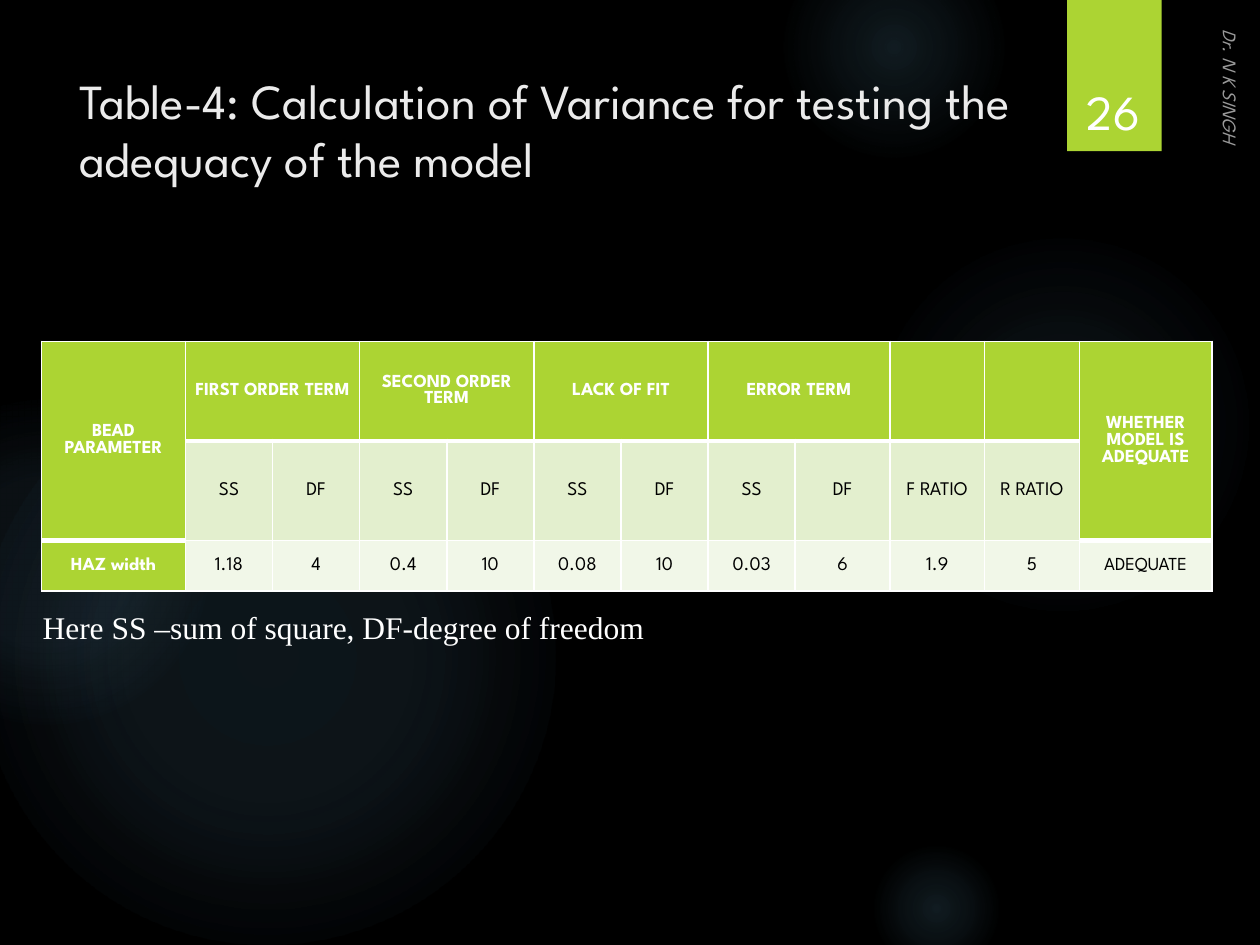
from lxml import etree
from pptx import Presentation
from pptx.dml.color import RGBColor
from pptx.enum.shapes import MSO_SHAPE as Shape
from pptx.enum.text import MSO_ANCHOR as Anchor, PP_ALIGN as Align
from pptx.oxml import parse_xml
from pptx.oxml.ns import nsdecls, qn
from pptx.util import Inches, Pt

BLACK = RGBColor(0x00, 0x00, 0x00)
WHITE = RGBColor(0xFF, 0xFF, 0xFF)
OFF_WHITE = RGBColor(0xEB, 0xEB, 0xEB)
GREEN = RGBColor(0xAC, 0xD4, 0x33)
BAND_DARK = RGBColor(0xE3, 0xEF, 0xCE)
BAND_LIGHT = RGBColor(0xF1, 0xF7, 0xE8)
GLOW = RGBColor(0x7A, 0xC4, 0xF0)
SANS, SERIF = "League Spartan", "Times New Roman"

# left, top, diameter, then (position %, opacity %) of each gradient stop
GLOWS = [
    (6.89, 1.83, 3.08, [(0, 7), (36, 6), (69, 0)]),
    (6.22, -0.5, 1.75, [(0, 14), (36, 7), (73, 0)]),
    (6.89, 6.67, 1.08, [(0, 14), (36, 7), (66, 0)]),
    (-0.17, 2.92, 4.58, [(0, 11), (36, 10), (75, 0)]),
    (-0.92, 3.17, 2.58, [(0, 8), (36, 8), (72, 0)]),
]

TITLE = "Table-4: Calculation of Variance for testing the adequacy of the model"
ROWS = [
    ["BEAD PARAMETER", "FIRST ORDER TERM", "", "SECOND ORDER TERM", "", "LACK OF FIT", "",
     "ERROR TERM", "", "", "", "WHETHER MODEL IS ADEQUATE"],
    ["", "SS", "DF", "SS", "DF", "SS", "DF", "SS", "DF", "F RATIO", "R RATIO", ""],
    ["HAZ width", "1.18", "4", "0.4", "10", "0.08", "10", "0.03", "6", "1.9", "5", "ADEQUATE"],
]
TABLE_LEFT, TABLE_TOP, TABLE_WIDTH = 0.33, 2.71, 9.29
COLUMN_SHARES = [1.14] + [0.69] * 7 + [0.75] * 3 + [1.05]
ROW_HEIGHTS = [0.79, 0.79, 0.4]
LAST = len(COLUMN_SHARES) - 1
MERGES = [((0, 0), (1, 0)), ((0, LAST), (1, LAST))]
MERGES += [((0, col), (0, col + 1)) for col in range(1, 9, 2)]


def write(frame, text, *, size, color=WHITE, font=SANS, bold=False, italic=False,
          align=Align.LEFT, anchor=Anchor.TOP, wrap=True, line=None):
    frame.word_wrap = wrap
    frame.vertical_anchor = anchor
    para = frame.paragraphs[0]
    para.alignment = align
    if line:
        para.line_spacing = Pt(line)
    span = para.add_run()
    span.text = text
    span.font.name, span.font.size = font, Pt(size)
    span.font.bold, span.font.italic = bold, italic
    span.font.color.rgb = color
    return span


def add_text(page, at, text, rotation=0, **style):
    box = page.shapes.add_textbox(*map(Inches, at))
    box.rotation = rotation
    return box, write(box.text_frame, text, **style)


def add_plain_shape(page, kind, at):
    shape = page.shapes.add_shape(kind, *map(Inches, at))
    shape.shadow.inherit = False
    shape.line.fill.background()
    return shape


def add_glow(page, left, top, size, stops):
    """Add a circle that fades out from its centre."""
    shape = add_plain_shape(page, Shape.OVAL, (left, top, size, size))
    marks = "".join(
        f'<a:gs pos="{pos * 1000}"><a:srgbClr val="{GLOW}">'
        f'<a:alpha val="{opacity * 1000}"/></a:srgbClr></a:gs>' for pos, opacity in stops)
    gradient = parse_xml(
        f'<a:gradFill {nsdecls("a")} rotWithShape="1"><a:gsLst>{marks}</a:gsLst>'
        '<a:path path="circle"><a:fillToRect l="50000" t="50000" r="50000" b="50000"/>'
        '</a:path></a:gradFill>')
    shape.element.spPr.find(qn("a:prstGeom")).addnext(gradient)


def set_borders(cell, **widths):
    props = cell._tc.get_or_add_tcPr()
    for side in "LRTB":
        width = Pt(widths.get(side, 1))
        props.append(parse_xml(
            f'<a:ln{side} {nsdecls("a")} w="{width}"><a:solidFill>'
            f'<a:srgbClr val="{WHITE}"/></a:solidFill></a:ln{side}>'))


def add_variance_table(page):
    table = page.shapes.add_table(
        len(ROWS), len(COLUMN_SHARES), Inches(TABLE_LEFT), Inches(TABLE_TOP),
        Inches(TABLE_WIDTH), Inches(sum(ROW_HEIGHTS))).table
    table.first_row = table.horz_banding = False
    for column, share in zip(table.columns, COLUMN_SHARES):
        column.width = Inches(TABLE_WIDTH * share / sum(COLUMN_SHARES))
    for row, height in zip(table.rows, ROW_HEIGHTS):
        row.height = Inches(height)
    for first, last in MERGES:
        table.cell(*first).merge(table.cell(*last))

    for r, texts in enumerate(ROWS):
        for c, text in enumerate(texts):
            cell = table.cell(r, c)
            tall = c in (0, LAST)
            header = r == 0 or c == 0 or (r == 1 and tall)
            heading_end = 1 if tall else 0
            set_borders(cell, B=3 if r == heading_end or r == 0 else 1,
                        T=3 if r == heading_end + 1 else 1)
            cell.fill.solid()
            cell.fill.fore_color.rgb = GREEN if header else (BAND_DARK if r == 1 else BAND_LIGHT)
            cell.margin_left = cell.margin_right = Inches(0.07)
            cell.margin_top = cell.margin_bottom = 0
            cell.vertical_anchor = Anchor.MIDDLE
            if text:
                write(cell.text_frame, text, size=10.5 if header or tall else 11,
                      color=WHITE if header else BLACK, bold=header,
                      align=Align.CENTER, anchor=None, wrap=None)


def main():
    deck = Presentation()
    deck.slide_width, deck.slide_height = Inches(10), Inches(7.5)
    page = deck.slides.add_slide(deck.slide_layouts[6])
    page.background.fill.solid()
    page.background.fill.fore_color.rgb = BLACK

    for glow in GLOWS:
        add_glow(page, *glow)
    tab = add_plain_shape(page, Shape.RECTANGLE, (8.47, 0, 0.75, 1.2))
    tab.fill.solid()
    tab.fill.fore_color.rgb = GREEN

    title, _ = add_text(page, (0.53, 0.5, 7.72, 1.53), TITLE, size=28, color=OFF_WHITE, line=33)
    title.text_frame.margin_top = Inches(0.07)
    add_variance_table(page)

    _, author = add_text(page, (7.64, 2.12, 4.22, 0.25), "Dr. N K SINGH", rotation=90,
                         size=11, italic=True, anchor=Anchor.BOTTOM)
    tint = author.font._element.find(".//" + qn("a:srgbClr"))
    etree.SubElement(tint, qn("a:alpha")).set("val", "60000")
    add_text(page, (8.49, 0.32, 0.69, 0.84), "26", size=28,
             align=Align.CENTER, anchor=Anchor.BOTTOM)
    add_text(page, (0.24, 4.78, 5.03, 0.4), "Here SS –sum of square, DF-degree of freedom",
             size=18, font=SERIF, wrap=False)
    deck.save("out.pptx")


if __name__ == "__main__":
    main()
